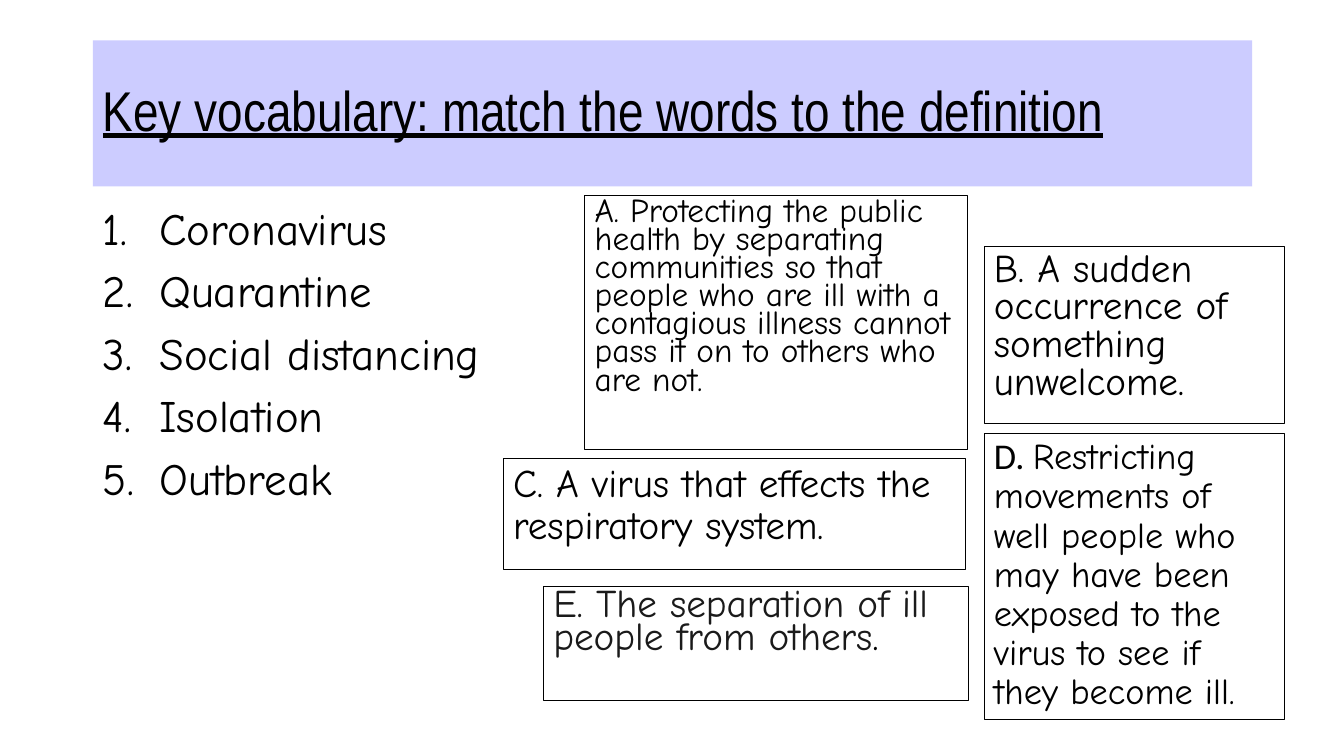
from dataclasses import dataclass

from lxml import etree
from pptx import Presentation
from pptx import util as u
from pptx.dml.color import RGBColor
from pptx.enum import text
from pptx.oxml import ns


@dataclass(frozen=True)
class Theme:
    ink: RGBColor = RGBColor(0, 0, 0)
    soft_ink: RGBColor = RGBColor(0x1A, 0x1A, 0x1A)
    banner: RGBColor = RGBColor(0xCC, 0xCC, 0xFF)
    paper: RGBColor = RGBColor(0xFF, 0xFF, 0xFF)
    heading_font: str = "Arial Narrow"
    body_font: str = "Comic Neue"
    label_font: str = "Calibri"
    heading_size: float = 40
    word_size: float = 32
    large: float = 28
    medium: float = 25.9
    small: float = 23.8
    border: float = 0.75


THEME = Theme()


@dataclass(frozen=True)
class Piece:
    wording: str
    font: str = THEME.body_font
    color: RGBColor = THEME.ink


@dataclass(frozen=True)
class Definition:
    left: float
    top: float
    width: float
    height: float
    size: float
    spacing: float
    pieces: tuple[Piece, ...]


WORDS = ("Coronavirus", "Quarantine", "Social distancing", "Isolation", "Outbreak")

DEFINITIONS = (
    Definition(4.99, 4.55, 4.59, 1.1, THEME.large, 0.9, (
        Piece("C. A virus that effects the respiratory system."),)),
    Definition(9.76, 4.3, 2.98, 2.84, THEME.medium, 0.9, (
        Piece("D. ", font=THEME.label_font),
        Piece("Restricting movements of well people who may have been "
              "exposed to the virus to see if they become ill."))),
    Definition(5.8, 1.94, 3.8, 2.52, THEME.small, 0.7, (
        Piece("A. Protecting the public health by separating communities so that "
              "people who are ill with a contagious illness cannot pass it on to "
              "others who are not."),)),
    Definition(9.76, 2.45, 2.98, 1.75, THEME.large, 0.8, (
        Piece("B. A sudden occurrence of something unwelcome."),)),
    Definition(5.39, 5.82, 4.22, 1.13, THEME.large, 0.7, (
        Piece("E. The separation of ill people from others", color=THEME.soft_ink),
        Piece("."))),
)


def place(shape, left: float, top: float, width: float, height: float, fill: RGBColor) -> None:
    shape.left, shape.top = u.Inches(left), u.Inches(top)
    shape.width, shape.height = u.Inches(width), u.Inches(height)
    shape.fill.solid()
    shape.fill.fore_color.rgb = fill
    shape.text_frame.word_wrap = True
    shape.text_frame.auto_size = text.MSO_AUTO_SIZE.NONE


def style(font, name: str, size: float, color: RGBColor) -> None:
    font.name, font.size = name, u.Pt(size)
    font.color.rgb = color


def number(paragraph, indent: float) -> None:
    properties = paragraph._p.get_or_add_pPr()
    properties.set("marL", str(u.Inches(indent)))
    properties.set("indent", str(-u.Inches(indent)))
    etree.SubElement(properties, ns.qn("a:buFont"), typeface="+mj-lt")
    etree.SubElement(properties, ns.qn("a:buAutoNum"), type="arabicPeriod")


def add_heading(slide) -> None:
    heading = slide.shapes.title
    place(heading, 0.92, 0.4, 11.5, 1.45, THEME.banner)
    heading.text_frame.vertical_anchor = text.MSO_ANCHOR.MIDDLE
    paragraph = heading.text_frame.paragraphs[0]
    paragraph.text = "Key vocabulary: match the words to the definition"
    paragraph.alignment = text.PP_ALIGN.LEFT
    paragraph.line_spacing = 0.9
    style(paragraph.font, THEME.heading_font, THEME.heading_size, THEME.ink)
    paragraph.font.underline = True


def add_words(slide) -> None:
    vocabulary = slide.placeholders[1]
    place(vocabulary, 0.92, 2, 4.59, 3.24, THEME.paper)
    vocabulary.text_frame.text = "\n".join(WORDS)
    for position, paragraph in enumerate(vocabulary.text_frame.paragraphs):
        number(paragraph, 0.56)
        paragraph.line_spacing = 0.9
        paragraph.space_before = u.Pt(10 if position else 0)
        style(paragraph.font, THEME.body_font, THEME.word_size, THEME.ink)


def add_definition(slide, definition: Definition) -> None:
    box = (definition.left, definition.top, definition.width, definition.height)
    card = slide.shapes.add_textbox(*map(u.Inches, box))
    place(card, *box, THEME.paper)
    card.line.color.rgb = THEME.ink
    card.line.width = u.Pt(THEME.border)
    paragraph = card.text_frame.paragraphs[0]
    paragraph.line_spacing = definition.spacing
    first = definition.pieces[0]
    style(paragraph.font, first.font, definition.size, first.color)
    for piece in definition.pieces:
        run = paragraph.add_run()
        run.text = piece.wording
        if piece.font != first.font:
            run.font.name = piece.font
        if piece.color != first.color:
            run.font.color.rgb = piece.color


def main() -> None:
    deck = Presentation()
    deck.slide_width, deck.slide_height = u.Inches(13.33), u.Inches(7.5)
    slide = deck.slides.add_slide(deck.slide_layouts[1])
    add_heading(slide)
    add_words(slide)
    for definition in DEFINITIONS:
        add_definition(slide, definition)
    deck.save("out.pptx")


if __name__ == "__main__":
    main()
